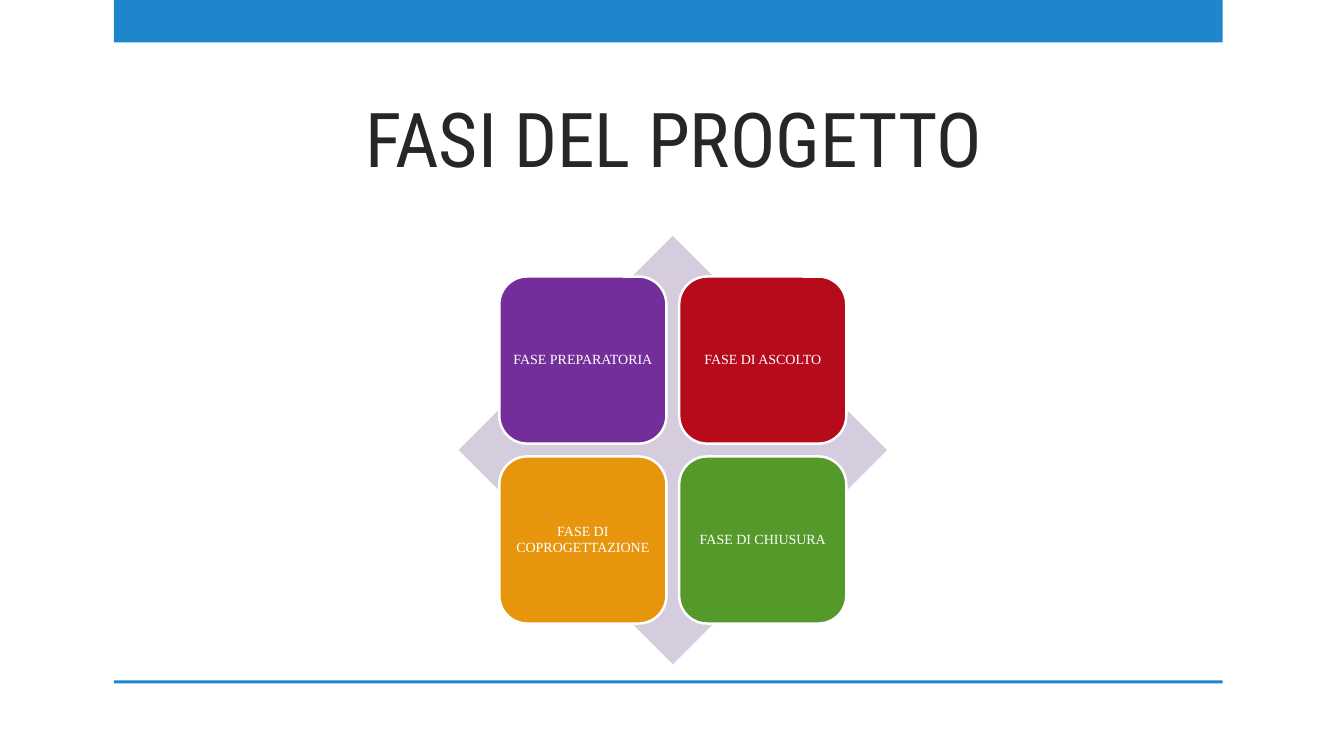
from dataclasses import dataclass

from pptx import Presentation
from pptx.dml.color import RGBColor
from pptx.enum.shapes import MSO_SHAPE
from pptx.enum.text import MSO_ANCHOR, MSO_AUTO_SIZE, PP_ALIGN
from pptx.shapes.autoshape import Shape
from pptx.slide import Slide
from pptx.text.text import TextFrame
from pptx.util import Pt

RECT = MSO_SHAPE.RECTANGLE
ROUND = MSO_SHAPE.ROUNDED_RECTANGLE
DIAMOND = MSO_SHAPE.DIAMOND
CENTER = PP_ALIGN.CENTER
MIDDLE = MSO_ANCHOR.MIDDLE
BOTTOM = MSO_ANCHOR.BOTTOM
NO_FIT = MSO_AUTO_SIZE.NONE


@dataclass(frozen=True)
class Theme:
    band: str = "1D86CD"
    ink: str = "262626"
    light: str = "FFFFFF"
    back: str = "D5CDDE"
    head_font: str = "Roboto Condensed"
    tile_font: str = "Times New Roman"
    head_size: float = 54
    tile_size: float = 10
    edge: float = 1.75


@dataclass(frozen=True)
class Box:
    left: float
    top: float
    width: float
    height: float


@dataclass(frozen=True)
class Phase:
    name: str
    fill: str


THEME = Theme()
BANDS = [Box(81.36, 0, 792, 30.24), Box(81.36, 486, 792, 2.16)]
TITLE = Box(125.28, 54.72, 712.08, 79.92)
MATRIX = Box(327.6, 168.48, 306, 306)
TILE = 0.39 * MATRIX.width
STEP = 0.42 * MATRIX.width
INSET = (MATRIX.width - STEP - TILE) / 2
PHASES = [
    Phase("FASE PREPARATORIA", "732E9A"),
    Phase("FASE DI ASCOLTO", "B50B1B"),
    Phase("FASE DI COPROGETTAZIONE", "E8950E"),
    Phase("FASE DI CHIUSURA", "55992B"),
]


def add_form(slide: Slide, kind: MSO_SHAPE, box: Box, fill: str) -> Shape:
    """Add a flat filled shape without an outline."""
    form = slide.shapes.add_shape(
        kind, Pt(box.left), Pt(box.top), Pt(box.width), Pt(box.height)
    )
    form.shadow.inherit = False
    form.fill.solid()
    form.fill.fore_color.rgb = RGBColor.from_string(fill)
    form.line.fill.background()
    return form


def set_text(frame: TextFrame, text: str, font: str, size: float, ink: str) -> None:
    frame.text = text
    frame.word_wrap = True
    frame.auto_size = NO_FIT
    line = frame.paragraphs[0]
    line.alignment = CENTER
    line.line_spacing = 0.9
    face = line.runs[0].font
    face.name = font
    face.size = Pt(size)
    face.color.rgb = RGBColor.from_string(ink)


def add_title(slide: Slide, text: str) -> None:
    title = slide.shapes.title
    title.left, title.top = Pt(TITLE.left), Pt(TITLE.top)
    title.width, title.height = Pt(TITLE.width), Pt(TITLE.height)
    frame = title.text_frame
    set_text(frame, text, THEME.head_font, THEME.head_size, THEME.ink)
    frame.vertical_anchor = BOTTOM


def add_phase(slide: Slide, phase: Phase, row: int, col: int) -> None:
    box = Box(
        MATRIX.left + INSET + col * STEP,
        MATRIX.top + INSET + row * STEP,
        TILE,
        TILE,
    )
    tile = add_form(slide, ROUND, box, phase.fill)
    tile.line.color.rgb = RGBColor.from_string(THEME.light)
    tile.line.width = Pt(THEME.edge)
    frame = tile.text_frame
    set_text(frame, phase.name, THEME.tile_font, THEME.tile_size, THEME.light)
    frame.vertical_anchor = MIDDLE
    frame.margin_left = frame.margin_right = Pt(3)
    frame.margin_top = frame.margin_bottom = Pt(3)


def main() -> None:
    deck = Presentation()
    deck.slide_width, deck.slide_height = Pt(960), Pt(540)
    slide = deck.slides.add_slide(deck.slide_layouts.get_by_name("Title Only"))
    for band in BANDS:
        add_form(slide, RECT, band, THEME.band)
    add_title(slide, "FASI DEL PROGETTO")
    add_form(slide, DIAMOND, MATRIX, THEME.back)
    for index, phase in enumerate(PHASES):
        add_phase(slide, phase, *divmod(index, 2))
    deck.save("out.pptx")


if __name__ == "__main__":
    main()
